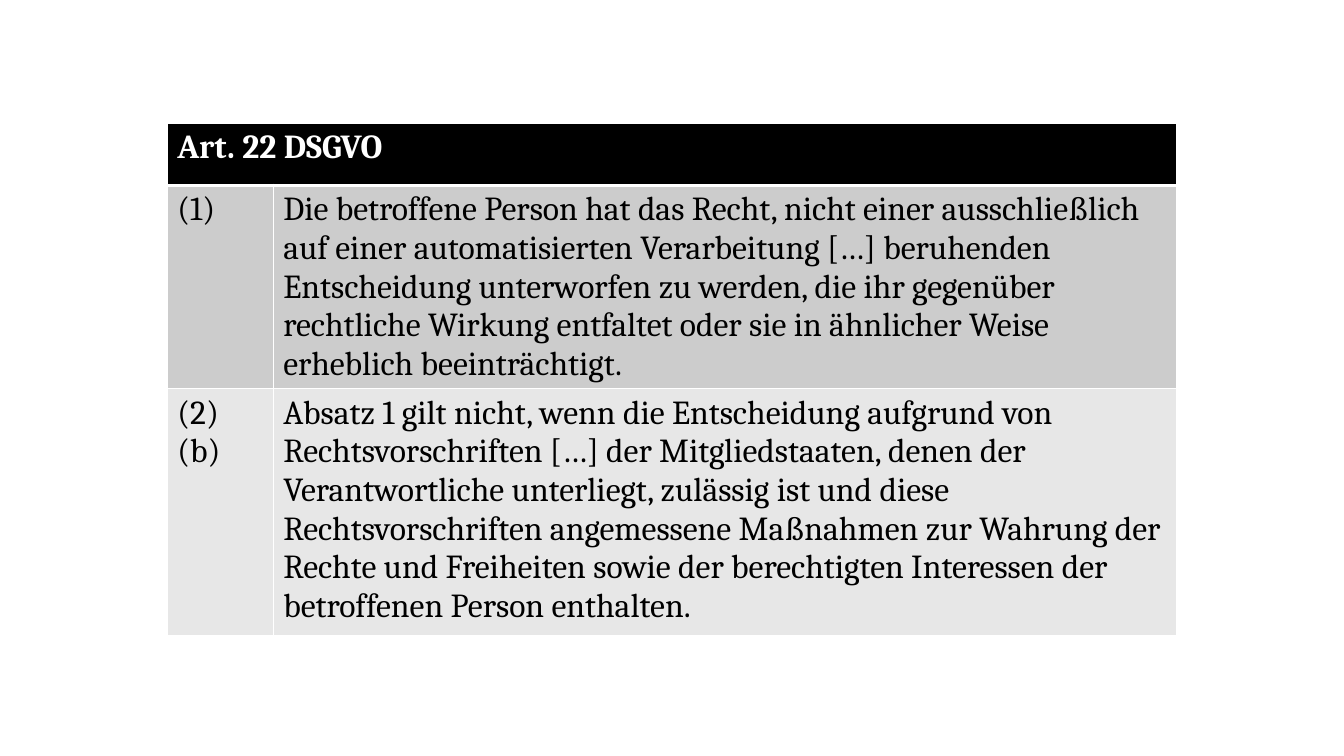
from lxml import etree
from pptx import Presentation
from pptx.dml.color import RGBColor
from pptx.oxml.ns import qn
from pptx.util import Inches, Pt

BLANK_LAYOUT = 6
FONT_NAME = "Cambria"
FONT_SIZE = 24
COLORS = {
    "header": "000000",
    "first": "CCCCCC",
    "second": "E7E7E7",
    "light": "FFFFFF",
    "dark": "000000",
}
COLUMN_WIDTHS = [1.05, 8.96]
ROW_HEIGHTS = [0.62, 1.99, 2.45]
HEADING = "Art. 22 DSGVO"
PARAGRAPHS = [
    ("(1)", "Die betroffene Person hat das Recht, nicht einer ausschließlich auf einer "
     "automatisierten Verarbeitung […] beruhenden Entscheidung unterworfen zu werden, "
     "die ihr gegenüber rechtliche Wirkung entfaltet oder sie in ähnlicher Weise "
     "erheblich beeinträchtigt."),
    ("(2) (b)", "Absatz 1 gilt nicht, wenn die Entscheidung aufgrund von "
     "Rechtsvorschriften […] der Mitgliedstaaten, denen der Verantwortliche unterliegt, "
     "zulässig ist und diese Rechtsvorschriften angemessene Maßnahmen zur Wahrung der "
     "Rechte und Freiheiten sowie der berechtigten Interessen der betroffenen Person "
     "enthalten."),
]


def set_borders(cell, widths):
    """Draw light borders with widths in points, keyed by side letter L, R, T, B."""
    properties = cell._tc.get_or_add_tcPr()
    for position, side in enumerate("LRTB"):
        line = etree.Element(qn(f"a:ln{side}"), w=str(Pt(widths[side])))
        fill = etree.SubElement(line, qn("a:solidFill"))
        etree.SubElement(fill, qn("a:srgbClr"), val=COLORS["light"])
        properties.insert(position, line)


def format_cell(cell, fill, top=1, bottom=1):
    """Fill a cell and set its borders."""
    cell.fill.solid()
    cell.fill.fore_color.rgb = RGBColor.from_string(COLORS[fill])
    set_borders(cell, {"L": 1, "R": 1, "T": top, "B": bottom})


def write_cell(cell, text, color, bold=False):
    """Put formatted text in a cell."""
    cell.text_frame.text = text
    font = cell.text_frame.paragraphs[0].runs[0].font
    font.name = FONT_NAME
    font.size = Pt(FONT_SIZE)
    font.bold = bold
    font.color.rgb = RGBColor.from_string(COLORS[color])


def add_article_table(slide):
    """Add the table with the article heading and its paragraphs."""
    frame = slide.shapes.add_table(
        len(ROW_HEIGHTS), len(COLUMN_WIDTHS), Inches(1.66), Inches(1.22),
        Inches(sum(COLUMN_WIDTHS)), Inches(sum(ROW_HEIGHTS)))
    table = frame.table
    for column, width in zip(table.columns, COLUMN_WIDTHS):
        column.width = Inches(width)
    for row, height in zip(table.rows, ROW_HEIGHTS):
        row.height = Inches(height)

    table.cell(0, 0).merge(table.cell(0, 1))
    for cell in table.rows[0].cells:
        format_cell(cell, "header", bottom=3)
    write_cell(table.cell(0, 0), HEADING, "light", bold=True)

    for index, (texts, fill) in enumerate(zip(PARAGRAPHS, ("first", "second")), start=1):
        for cell, text in zip(table.rows[index].cells, texts):
            format_cell(cell, fill, top=3 if index == 1 else 1)
            write_cell(cell, text, "dark")


def main():
    """Build and save the slide."""
    presentation = Presentation()
    presentation.slide_width = Inches(13.33)
    presentation.slide_height = Inches(7.5)
    slide = presentation.slides.add_slide(presentation.slide_layouts[BLANK_LAYOUT])
    add_article_table(slide)
    presentation.save("out.pptx")


if __name__ == "__main__":
    main()
